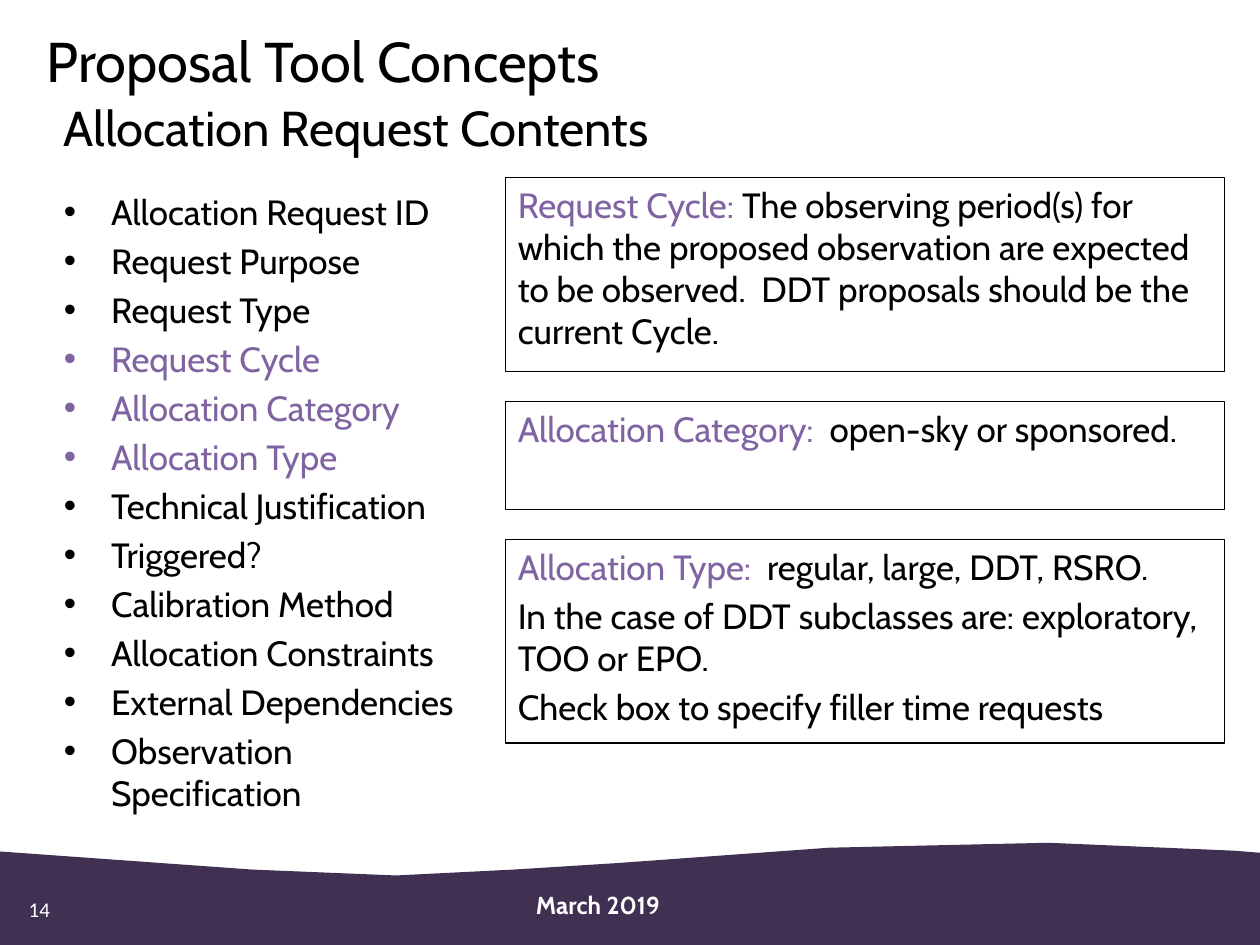
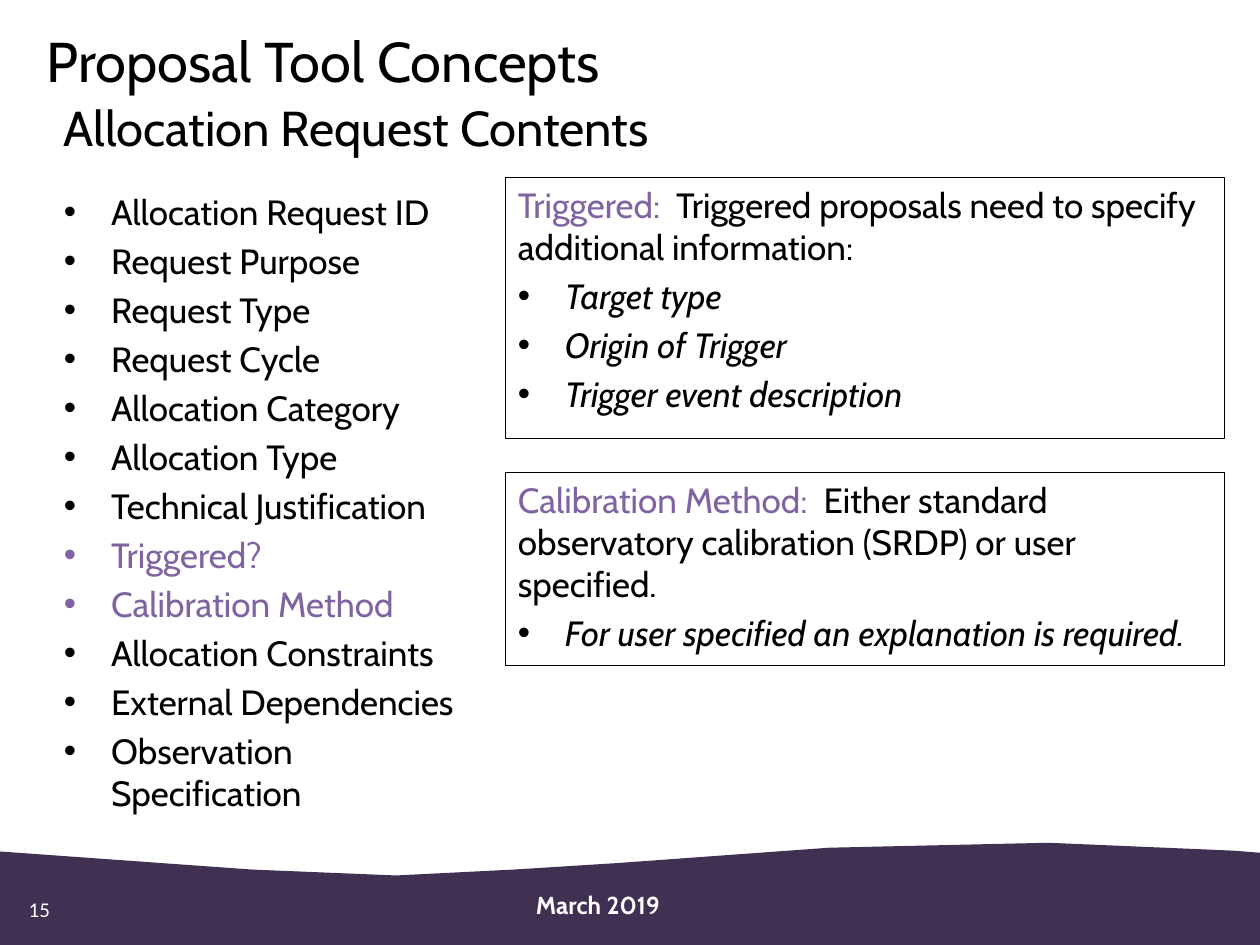
import pptx
import pptx.dml.color
import pptx.enum.shapes
import pptx.enum.text
import pptx.util
import lxml.etree

Cm = pptx.util.Cm
Pt = pptx.util.Pt
BLACK = pptx.dml.color.RGBColor(0x00, 0x00, 0x00)
WHITE = pptx.dml.color.RGBColor(0xFF, 0xFF, 0xFF)
PURPLE = pptx.dml.color.RGBColor(0x80, 0x64, 0xA2)
DARK_PURPLE = pptx.dml.color.RGBColor(0x40, 0x31, 0x52)
LEFT = pptx.enum.text.PP_ALIGN.LEFT
CENTER = pptx.enum.text.PP_ALIGN.CENTER
FONT = "Cabin"
DRAWING_NS = "{http://schemas.openxmlformats.org/drawingml/2006/main}"

WAVE = [(-0.23, 17.15), (5.08, 17.53), (7.98, 17.65), (10.36, 17.53),
        (12.45, 17.4), (16.71, 17.09), (21.13, 16.99), (24.87, 17.15),
        (25.76, 17.22), (25.73, 19.3), (-0.18, 19.25)]

CONTENTS = ["Allocation Request ID", "Request Purpose", "Request Type",
            "Request Cycle", "Allocation Category", "Allocation Type",
            "Technical Justification", "Triggered?", "Calibration Method",
            "Allocation Constraints", "External Dependencies",
            "Observation Specification"]

SLIDES = [
    (14, ["Request Cycle", "Allocation Category", "Allocation Type"], [
        (3.58, 3.91, "Request Cycle: ",
         "The observing period(s) for which the proposed observation are "
         "expected to be observed.  DDT proposals should be the current Cycle.",
         [], []),
        (8.1, 2.18, "Allocation Category: ", " open-sky or sponsored.", [], []),
        (10.87, 4.11, "Allocation Type: ", " regular, large, DDT, RSRO.",
         ["In the case of DDT subclasses are: exploratory, TOO or EPO.",
          "Check box to specify filler time requests"], []),
    ]),
    (15, ["Triggered?", "Calibration Method"], [
        (3.58, 5.26, "Triggered: ",
         " Triggered proposals need to specify additional information:",
         [], ["Target type", "Origin of Trigger", "Trigger event description"]),
        (9.53, 3.89, "Calibration Method: ",
         " Either standard observatory calibration (SRDP) or user specified.",
         [], ["For user specified an explanation is required."]),
    ]),
]


def add_run(paragraph, text, size, color=BLACK, font=FONT, bold=False, italic=False):
    run = paragraph.add_run()
    run.text = text
    run.font.name = font
    run.font.size = Pt(size)
    run.font.color.rgb = color
    run.font.bold = bold
    run.font.italic = italic


def next_paragraph(frame, bulleted=False, align=LEFT):
    paragraph = frame.paragraphs[0]
    if paragraph.runs:
        paragraph = frame.add_paragraph()
        paragraph.space_before = Pt(4)
    if bulleted:
        properties = paragraph._p.get_or_add_pPr()
        properties.set("marL", str(Cm(0.95)))
        properties.set("indent", str(-Cm(0.95)))
        lxml.etree.SubElement(properties, DRAWING_NS + "buFont", typeface="Arial")
        lxml.etree.SubElement(properties, DRAWING_NS + "buChar", char="•")
    paragraph.alignment = align
    return paragraph


deck = pptx.Presentation()
deck.slide_width = Cm(25.4)
deck.slide_height = Cm(19.05)

for number, highlighted, explanations in SLIDES:
    slide = deck.slides.add_slide(deck.slide_layouts[5])
    shapes = slide.shapes

    outline = [(Cm(x), Cm(y)) for x, y in WAVE]
    builder = shapes.build_freeform(*outline[0])
    builder.add_line_segments(outline[1:], close=True)
    wave = builder.convert_to_shape()
    wave.shadow.inherit = False
    wave.fill.solid()
    wave.fill.fore_color.rgb = DARK_PURPLE
    wave.line.fill.background()

    page = shapes.add_textbox(Cm(0.58), Cm(18.08), Cm(10.46), Cm(0.61)).text_frame
    page.margin_left = page.margin_right = page.margin_top = page.margin_bottom = 0
    add_run(next_paragraph(page), str(number), 12, WHITE, font="Calibri")

    date = shapes.add_textbox(Cm(4.83), Cm(17.81), Cm(14.45), Cm(1.07)).text_frame
    date.word_wrap = True
    add_run(next_paragraph(date, align=CENTER), "March 2019", 14, WHITE, bold=True)

    title = shapes.title
    title.left, title.top, title.width, title.height = Cm(0.69), Cm(0.41), Cm(23.98), Cm(1.32)
    title.text_frame.auto_size = pptx.enum.text.MSO_AUTO_SIZE.NONE
    title.text_frame.vertical_anchor = pptx.enum.text.MSO_ANCHOR.TOP
    add_run(next_paragraph(title.text_frame), "Proposal Tool Concepts", 32)

    subtitle = shapes.add_textbox(Cm(1.04), Cm(1.85), Cm(23.98), Cm(1.73)).text_frame
    subtitle.word_wrap = True
    add_run(next_paragraph(subtitle), "Allocation Request Contents", 28)

    contents = shapes.add_textbox(Cm(1.04), Cm(3.71), Cm(8.86), Cm(12.67)).text_frame
    contents.word_wrap = True
    for item in CONTENTS:
        color = PURPLE if item in highlighted else BLACK
        add_run(next_paragraph(contents, bulleted=True), item, 20, color)

    for top, height, term, meaning, remarks, details in explanations:
        explanation = shapes.add_shape(pptx.enum.shapes.MSO_SHAPE.RECTANGLE,
                                       Cm(10.19), Cm(top), Cm(14.5), Cm(height))
        explanation.shadow.inherit = False
        explanation.fill.background()
        explanation.line.color.rgb = BLACK
        explanation.line.width = Pt(0.75)
        frame = explanation.text_frame
        frame.word_wrap = True
        frame.vertical_anchor = pptx.enum.text.MSO_ANCHOR.TOP
        definition = next_paragraph(frame)
        add_run(definition, term, 20, PURPLE)
        add_run(definition, meaning, 20)
        for remark in remarks:
            add_run(next_paragraph(frame), remark, 20)
        for detail in details:
            add_run(next_paragraph(frame, bulleted=True), detail, 20, italic=True)

deck.save("out.pptx")
